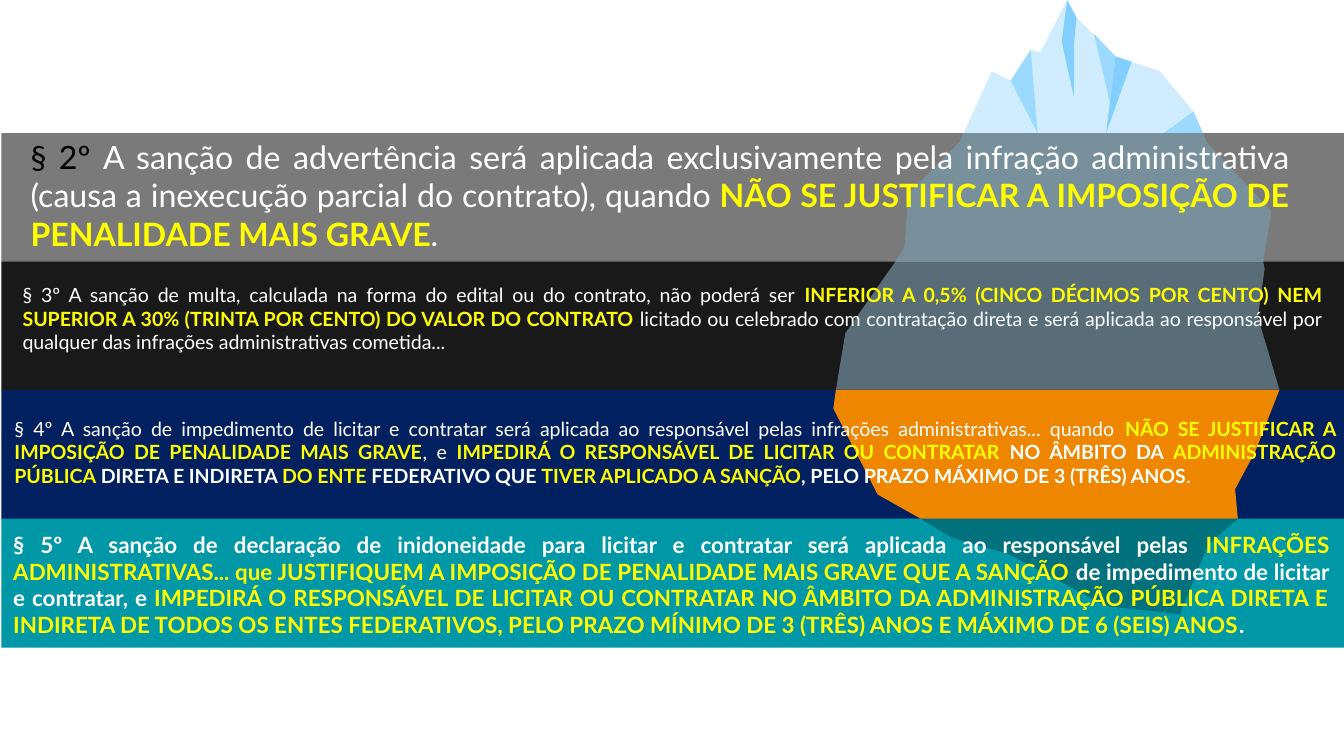
from dataclasses import dataclass

from pptx import Presentation
from pptx.dml.color import RGBColor
from pptx.enum.shapes import MSO_SHAPE
from pptx.enum.text import MSO_AUTO_SIZE, PP_ALIGN
from pptx.util import Inches, Pt

RECT = MSO_SHAPE.RECTANGLE
JUSTIFY = PP_ALIGN.JUSTIFY
FIT_SHAPE = MSO_AUTO_SIZE.SHAPE_TO_FIT_TEXT

FONT = "Lato"
BLACK, WHITE, YELLOW = "000000", "FFFFFF", "FFFF00"
PALE, LIGHT, BRIGHT = "CFEDFF", "9CD9FF", "82CFFF"
SLIDE_WIDTH = 10
SLIDE_HEIGHT = SLIDE_WIDTH * 9 / 16
BAND_LEFT, BAND_TOP, BAND_WIDTH, BAND_HEIGHT = 0.01, 0.99, 9.99, 0.96
BAND_STEP = (3.86 - BAND_TOP) / 3
BAND_COLORS = ["7A7A7A", "191919", "002060", "0097A7"]


@dataclass
class Facet:
    color: str
    points: list[tuple[float, float]]


@dataclass
class Run:
    text: str
    color: str = WHITE
    bold: bool = False


@dataclass
class Clause:
    left: float
    top: float
    width: float
    height: float
    size: float
    runs: list[Run]


ICEBERG = [
    Facet("00717D", [(7.08, 4), (7.5, 4.12), (8.23, 4.51), (8.78, 4.57),
                     (8.99, 4.05), (9.21, 3.86), (6.85, 3.86)]),
    Facet(PALE, [(8.88, 0.83), (8.63, 0.53), (8.3, 0.42), (8.01, 0.13),
                 (7.94, 0), (7.74, 0.39), (7.67, 0.37), (7.52, 0.6),
                 (7.38, 0.53), (7.17, 0.99), (8.95, 0.99)]),
    Facet(LIGHT, [(7.67, 0.37), (7.72, 0.99), (7.52, 0.6)]),
    Facet(LIGHT, [(8.88, 0.83), (8.66, 0.99), (8.95, 0.99)]),
    Facet(BRIGHT, [(8.3, 0.42), (8.23, 0.99), (8.42, 0.46)]),
    Facet(BRIGHT, [(8.01, 0.13), (7.99, 0.34), (7.99, 0.72), (7.9, 0.31),
                   (7.94, 0)]),
    Facet(LIGHT, [(8.14, 0.25), (8.26, 0.77), (8.3, 0.42)]),
    Facet("78909C", [(9.46, 1.57), (8.98, 1.06), (8.95, 0.99), (7.17, 0.99),
                     (7.14, 1.06), (6.76, 1.44), (6.73, 1.84), (6.66, 1.95),
                     (9.4, 1.95)]),
    Facet("EF8600", [(9.34, 3.36), (9.52, 2.9), (6.22, 2.9), (6.2, 3.04),
                     (6.53, 3.68), (6.85, 3.86), (9.21, 3.86), (9.19, 3.64)]),
    Facet("586D77", [(9.36, 2.36), (9.41, 2), (9.4, 1.95), (6.66, 1.95),
                     (6.29, 2.48), (6.22, 2.9), (9.52, 2.9)]),
]

CLAUSES = [
    Clause(0.13, 0.97, 9.56, 0.97, 17.2, [
        Run("§ 2º ", BLACK),
        Run("A sanção de advertência será aplicada exclusivamente pela infração "
            "administrativa (causa a inexecução parcial do contrato), quando "),
        Run("NÃO SE JUSTIFICAR A IMPOSIÇÃO DE PENALIDADE MAIS GRAVE", YELLOW, True),
        Run("."),
    ]),
    Clause(0.07, 2.06, 9.87, 0.63, 10.5, [
        Run("§ 3º A sanção de multa, calculada na forma do edital ou do contrato, "
            "não poderá ser "),
        Run("INFERIOR A 0,5% (CINCO DÉCIMOS POR CENTO) NEM SUPERIOR A 30% "
            "(TRINTA POR CENTO) DO VALOR DO CONTRATO", YELLOW, True),
        Run(" licitado ou celebrado com contratação direta e será aplicada ao "
            "responsável por qualquer das infrações administrativas cometida..."),
    ]),
    Clause(0.01, 3.05, 10.03, 0.63, 10.5, [
        Run("§ 4º A sanção de impedimento de licitar e contratar será aplicada ao "
            "responsável pelas infrações administrativas... quando "),
        Run("NÃO SE JUSTIFICAR A IMPOSIÇÃO DE PENALIDADE MAIS GRAVE", YELLOW, True),
        Run(", e "),
        Run("IMPEDIRÁ O RESPONSÁVEL DE LICITAR OU CONTRATAR", YELLOW, True),
        Run(" NO ÂMBITO DA ", WHITE, True),
        Run("ADMINISTRAÇÃO PÚBLICA", YELLOW, True),
        Run(" DIRETA E INDIRETA ", WHITE, True),
        Run("DO ENTE ", YELLOW, True),
        Run("FEDERATIVO QUE ", WHITE, True),
        Run("TIVER APLICADO A SANÇÃO", YELLOW, True),
        Run(", PELO PRAZO MÁXIMO DE 3 (TRÊS) ANOS", WHITE, True),
        Run("."),
    ]),
    Clause(0, 3.9, 9.99, 0.91, 12, [
        Run("§ 5º A sanção de declaração de inidoneidade para licitar e contratar "
            "será aplicada ao responsável pelas ", WHITE, True),
        Run("INFRAÇÕES ADMINISTRATIVAS... que JUSTIFIQUEM A IMPOSIÇÃO DE "
            "PENALIDADE MAIS GRAVE QUE A SANÇÃO", YELLOW, True),
        Run(" de impedimento de licitar e contratar, e ", WHITE, True),
        Run("IMPEDIRÁ O RESPONSÁVEL DE LICITAR OU CONTRATAR NO ÂMBITO DA "
            "ADMINISTRAÇÃO PÚBLICA DIRETA E INDIRETA DE TODOS OS ENTES "
            "FEDERATIVOS, PELO PRAZO MÍNIMO DE 3 (TRÊS) ANOS E MÁXIMO DE 6 "
            "(SEIS) ANOS", YELLOW, True),
        Run(".", WHITE, True),
    ]),
]


def rgb(color: str) -> RGBColor:
    return RGBColor.from_string(color)


def paint(sp, color: str) -> None:
    sp.shadow.inherit = False
    sp.fill.solid()
    sp.fill.fore_color.rgb = rgb(color)
    sp.line.fill.background()


def draw_band(s, index: int, color: str) -> None:
    sp = s.shapes.add_shape(RECT, Inches(BAND_LEFT),
                            Inches(BAND_TOP + index * BAND_STEP),
                            Inches(BAND_WIDTH), Inches(BAND_HEIGHT))
    paint(sp, color)


def draw_facet(group, facet: Facet) -> None:
    start, *rest = [(Inches(x), Inches(y)) for x, y in facet.points]
    builder = group.shapes.build_freeform(*start)
    builder.add_line_segments(rest, close=True)
    paint(builder.convert_to_shape(), facet.color)


def draw_clause(s, clause: Clause) -> None:
    sp = s.shapes.add_textbox(Inches(clause.left), Inches(clause.top),
                              Inches(clause.width), Inches(clause.height))
    tf = sp.text_frame
    tf.word_wrap = True
    tf.auto_size = FIT_SHAPE
    p = tf.paragraphs[0]
    p.alignment = JUSTIFY
    for run in clause.runs:
        r = p.add_run()
        r.text = run.text
        r.font.name = FONT
        r.font.size = Pt(clause.size)
        r.font.bold = run.bold
        r.font.color.rgb = rgb(run.color)


def main() -> None:
    prs = Presentation()
    prs.slide_width = Inches(SLIDE_WIDTH)
    prs.slide_height = Inches(SLIDE_HEIGHT)
    s = prs.slides.add_slide(prs.slide_layouts[6])
    for i, color in enumerate(BAND_COLORS):
        draw_band(s, i, color)
    iceberg = s.shapes.add_group_shape()
    for facet in ICEBERG:
        draw_facet(iceberg, facet)
    for clause in CLAUSES:
        draw_clause(s, clause)
    prs.save("out.pptx")


if __name__ == "__main__":
    main()
